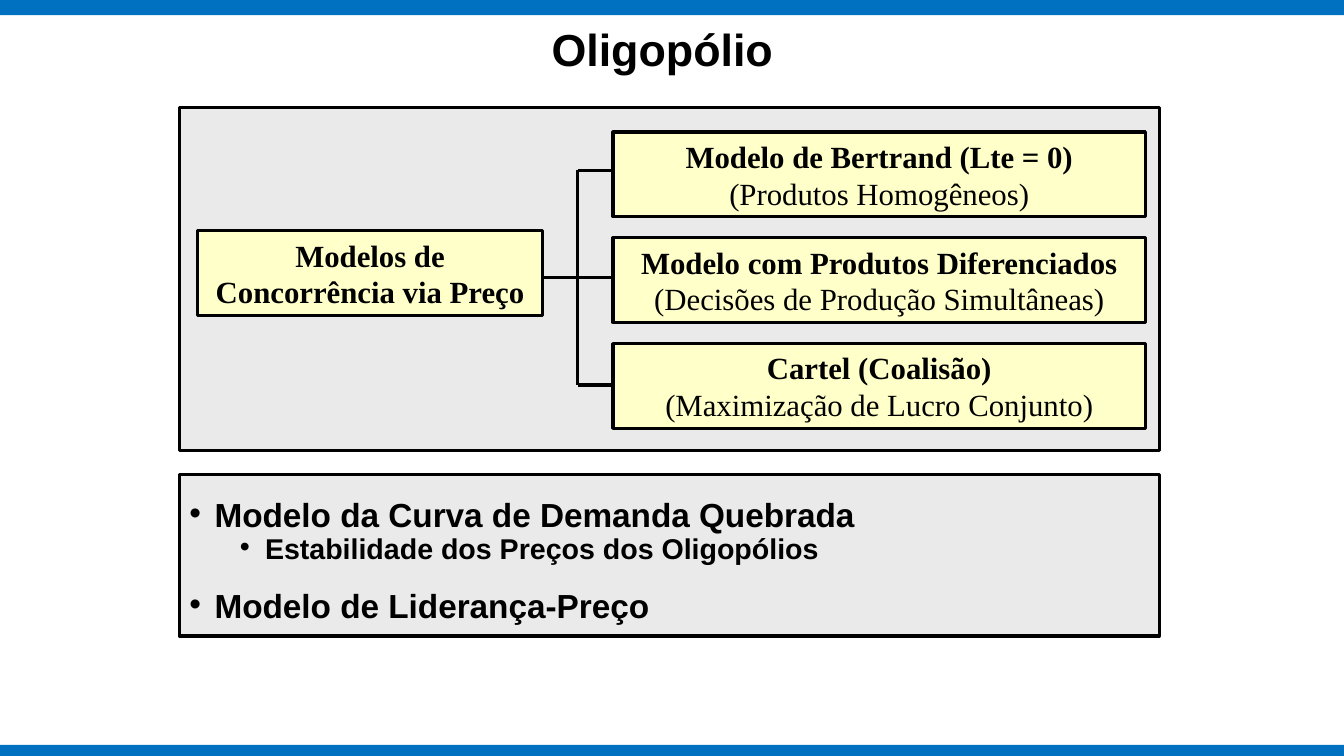
from lxml import etree
from pptx import Presentation
from pptx import util as u
from pptx.dml.color import RGBColor
from pptx.enum import shapes, text
from pptx.oxml.ns import qn

WIDTH, HEIGHT = 13.33, 7.5
BLACK, BLUE, GREY, CREAM = "000000", "0070C0", "EAEAEA", "FFFFC9"
SERIF, SANS = "Times New Roman", "Arial"

TITLE = "Oligopólio"
ROOT = "Modelos de Concorrência via Preço"
MODELS = [
    ("Modelo de Bertrand (Lte = 0)", "(Produtos Homogêneos)"),
    ("Modelo com Produtos Diferenciados", "(Decisões de Produção Simultâneas)"),
    ("Cartel (Coalisão)", "(Maximização de Lucro Conjunto)"),
]
BULLETS = [
    ("Modelo da Curva de Demanda Quebrada", 0, 0),
    ("Estabilidade dos Preços dos Oligopólios", 1, 5),
    ("Modelo de Liderança-Preço", 0, 23),
]
BULLET_LEVELS = [(23.8, 0.25), (20.4, 0.75)]

BARS = [(0, 0.15), (7.39, 0.11)]
PANEL_LEFT, PANEL_WIDTH = 1.78, 9.72
TREE_TOP, TREE_HEIGHT = 1.07, 3.4
LIST_TOP, LIST_HEIGHT = 4.71, 1.6
BOX_HEIGHT, MODEL_TOP, MODEL_PITCH = 0.84, 1.31, 1.05
MODEL_LEFT, MODEL_WIDTH = 6.08, 5.28
ROOT_LEFT, ROOT_TOP, ROOT_WIDTH = 1.96, 2.29, 3.42
TRUNK = 5.73
BRANCHES = [1.69, 2.75, 3.82]


def color(value):
    return RGBColor.from_string(value)


def apply(target, values):
    for name, value in values.items():
        setattr(target, name, value)


def add_box(page, place, fill, outlined=True):
    box = page.shapes.add_shape(shapes.MSO_SHAPE.RECTANGLE, *map(u.Inches, place))
    box.shadow.inherit = False
    box.fill.solid()
    box.fill.fore_color.rgb = color(fill)
    if outlined:
        box.line.color.rgb = color(BLACK)
        box.line.width = u.Pt(2.25)
    else:
        box.line.fill.background()
    return box


def write(box, lines, font, frame_values):
    frame = box.text_frame
    apply(frame, {"word_wrap": True, **frame_values})
    for index, (words, size, bold, layout) in enumerate(lines):
        para = frame.paragraphs[0] if index == 0 else frame.add_paragraph()
        apply(para, layout)
        span = para.add_run()
        span.text = words
        apply(span.font, {"name": font, "size": u.Pt(size), "bold": bold})
        span.font.color.rgb = color(BLACK)


def add_line(page, *ends):
    line = page.shapes.add_connector(shapes.MSO_CONNECTOR.STRAIGHT, *map(u.Inches, ends))
    line.line.color.rgb = color(BLACK)
    line.line.width = u.Pt(2.25)
    etree.SubElement(line._element.spPr, qn("a:effectLst"))


def add_bullet(para, indent):
    properties = para._p.get_or_add_pPr()
    properties.set("marL", str(u.Inches(indent)))
    properties.set("indent", str(u.Inches(-0.25)))
    etree.SubElement(properties, qn("a:buFont")).set("typeface", SANS)
    etree.SubElement(properties, qn("a:buChar")).set("char", "•")


def add_tree(page):
    centered = {"alignment": text.PP_ALIGN.CENTER}
    middle = {"vertical_anchor": text.MSO_ANCHOR.MIDDLE}
    add_box(page, (PANEL_LEFT, TREE_TOP, PANEL_WIDTH, TREE_HEIGHT), GREY)
    for row, (name, detail) in enumerate(MODELS):
        top = MODEL_TOP + row * MODEL_PITCH
        box = add_box(page, (MODEL_LEFT, top, MODEL_WIDTH, BOX_HEIGHT), CREAM)
        write(box, [(name, 22, True, centered), (detail, 22, False, centered)], SERIF, middle)
    root = add_box(page, (ROOT_LEFT, ROOT_TOP, ROOT_WIDTH, BOX_HEIGHT), CREAM)
    write(root, [(ROOT, 22, True, centered)], SERIF, middle)
    add_line(page, TRUNK, BRANCHES[0], TRUNK, BRANCHES[-1])
    add_line(page, ROOT_LEFT + ROOT_WIDTH, BRANCHES[1], TRUNK, BRANCHES[1])
    for branch in BRANCHES:
        add_line(page, TRUNK, branch, MODEL_LEFT + 0.02, branch)


def add_list(page):
    panel = add_box(page, (PANEL_LEFT, LIST_TOP, PANEL_WIDTH, LIST_HEIGHT), GREY)
    lines = [
        (words, BULLET_LEVELS[level][0], True, {
            "level": level,
            "alignment": text.PP_ALIGN.LEFT,
            "line_spacing": 0.7,
            "space_before": u.Pt(gap),
        })
        for words, level, gap in BULLETS
    ]
    write(panel, lines, SANS, {"vertical_anchor": text.MSO_ANCHOR.TOP, "margin_top": u.Inches(0.3)})
    for para, (_, level, _) in zip(panel.text_frame.paragraphs, BULLETS):
        add_bullet(para, BULLET_LEVELS[level][1])


def main():
    deck = Presentation()
    apply(deck, {"slide_width": u.Inches(WIDTH), "slide_height": u.Inches(HEIGHT)})
    page = deck.slides.add_slide(deck.slide_layouts[6])
    for top, height in BARS:
        add_box(page, (0, top, WIDTH, height), BLUE, outlined=False)
    add_tree(page)
    add_list(page)
    title = page.shapes.add_textbox(*map(u.Inches, (1.96, 0.14, 9.22, 0.76)))
    write(title, [(TITLE, 32, True, {"alignment": text.PP_ALIGN.CENTER})], SANS,
          {"margin_top": u.Inches(0.08)})
    deck.save("out.pptx")


if __name__ == "__main__":
    main()
